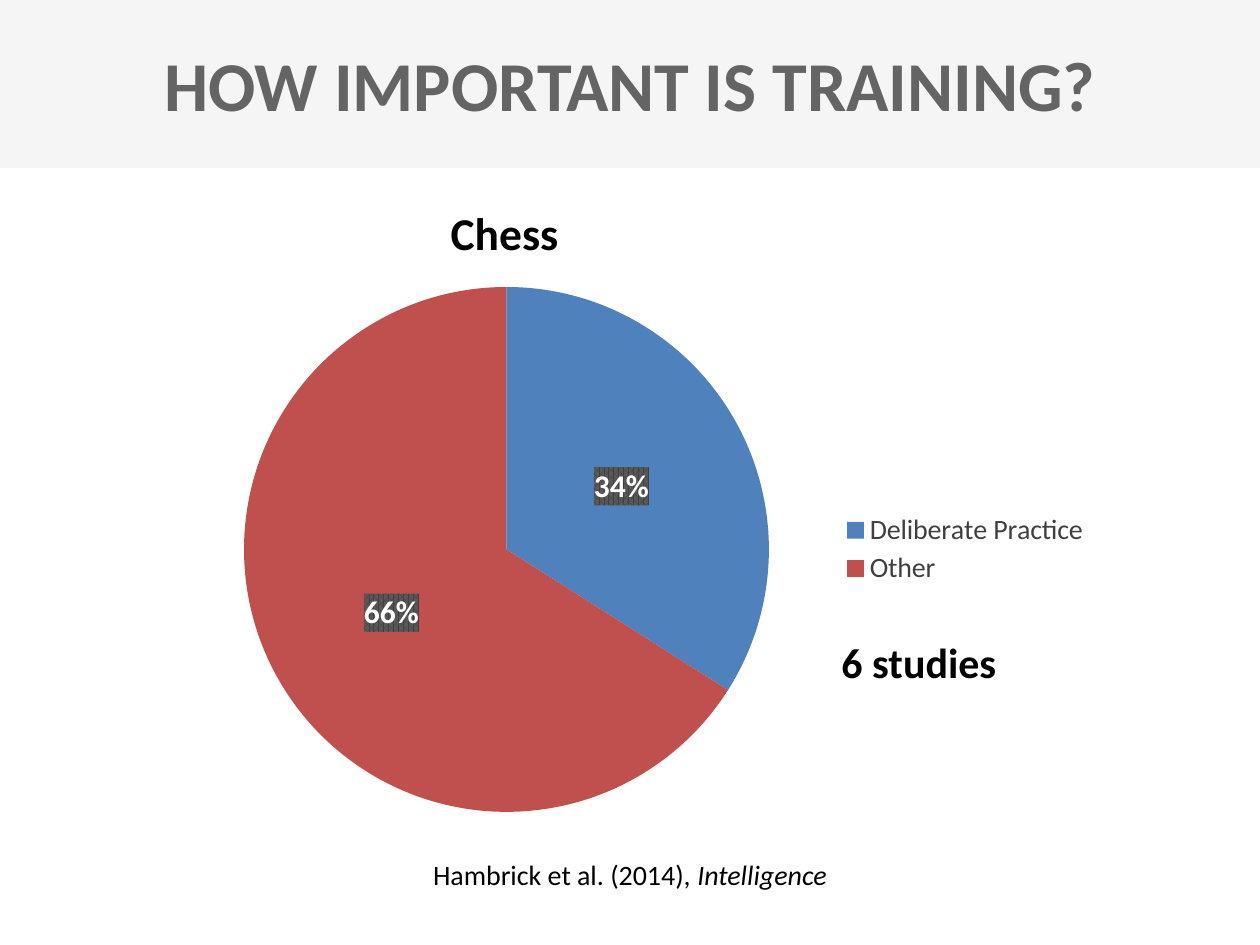
from dataclasses import dataclass

from lxml.etree import SubElement
from pptx import Presentation
from pptx.chart.data import CategoryChartData
from pptx.dml.color import RGBColor
from pptx.enum.chart import XL_CHART_TYPE, XL_LABEL_POSITION, XL_LEGEND_POSITION
from pptx.enum.shapes import MSO_SHAPE
from pptx.enum.text import MSO_ANCHOR, MSO_AUTO_SIZE, PP_ALIGN
from pptx.oxml import parse_xml
from pptx.oxml.ns import nsdecls, qn
from pptx.util import Pt

FONT_NAME = "Calibri"


@dataclass(frozen=True)
class Box:
    left: float
    top: float
    width: float
    height: float

    def lengths(self) -> tuple:
        return Pt(self.left), Pt(self.top), Pt(self.width), Pt(self.height)


@dataclass(frozen=True)
class TextRun:
    text: str
    italic: bool = False


@dataclass(frozen=True)
class Caption:
    box: Box
    runs: tuple[TextRun, ...]
    size: float
    bold: bool = True
    alignment: PP_ALIGN = PP_ALIGN.CENTER


@dataclass(frozen=True)
class Slice:
    category: str
    value: int
    color: str


CAPTIONS = (
    Caption(
        Box(0, 486.72, 720, 26.64),
        (TextRun("Hambrick et al. (2014), "), TextRun("Intelligence", True)),
        16,
        False,
    ),
    Caption(Box(135.36, 113.76, 306, 38.88), (TextRun("Chess"),), 26),
    Caption(Box(473.76, 360, 176.4, 36), (TextRun("6 studies"),), 24, True, PP_ALIGN.LEFT),
)
SLICES = (Slice("Deliberate Practice", 34, "4F81BD"), Slice("Other", 66, "C0504D"))
CHART_BOX = Box(100.8, 154.08, 527.76, 319.68)
PIE_BOX = Box(139.43, 164, 300, 300)
LEGEND_BOX = Box(479, 291, 145, 46)


def color(value: str) -> RGBColor:
    return RGBColor.from_string(value)


def style_font(font, size: float, value: str, bold: bool = False) -> None:
    font.name = FONT_NAME
    font.size = Pt(size)
    font.bold = bold
    font.color.rgb = color(value)


def add_band(slide, box: Box) -> None:
    shape = slide.shapes.add_shape(MSO_SHAPE.RECTANGLE, *box.lengths())
    shape.shadow.inherit = False
    shape.fill.solid()
    shape.fill.fore_color.rgb = color("F5F5F5")
    shape.line.fill.background()
    slide.shapes._spTree.insert(2, shape._element)


def fill_title(slide, box: Box, text: str) -> None:
    title = slide.shapes.title
    title.left, title.top, title.width, title.height = box.lengths()
    frame = title.text_frame
    frame.auto_size = MSO_AUTO_SIZE.NONE
    frame.vertical_anchor = MSO_ANCHOR.MIDDLE
    paragraph = frame.paragraphs[0]
    paragraph.alignment = PP_ALIGN.CENTER
    run = paragraph.add_run()
    run.text = text
    style_font(run.font, 40, "646464", True)


def add_caption(slide, caption: Caption) -> None:
    frame = slide.shapes.add_textbox(*caption.box.lengths()).text_frame
    frame.word_wrap = True
    frame.auto_size = MSO_AUTO_SIZE.SHAPE_TO_FIT_TEXT
    paragraph = frame.paragraphs[0]
    paragraph.alignment = caption.alignment
    for text_run in caption.runs:
        run = paragraph.add_run()
        run.text = text_run.text
        style_font(run.font, caption.size, "000000", caption.bold)
        run.font.italic = text_run.italic


def make_layout(box: Box, inner: bool = False):
    layout = parse_xml(f"<c:layout {nsdecls('c')}/>")
    manual = SubElement(layout, qn("c:manualLayout"))
    settings = {"layoutTarget": "inner"} if inner else {}
    settings |= {
        "xMode": "edge",
        "yMode": "edge",
        "x": round((box.left - CHART_BOX.left) / CHART_BOX.width, 4),
        "y": round((box.top - CHART_BOX.top) / CHART_BOX.height, 4),
        "w": round(box.width / CHART_BOX.width, 4),
        "h": round(box.height / CHART_BOX.height, 4),
    }
    for name, value in settings.items():
        SubElement(manual, qn(f"c:{name}")).set("val", str(value))
    return layout


def place_part(part, layout, position: int) -> None:
    for existing in part.findall(qn("c:layout")):
        part.remove(existing)
    part.insert(position, layout)


def format_labels(plot) -> None:
    plot.has_data_labels = True
    labels = plot.data_labels
    labels.show_percentage = True
    labels.show_value = False
    labels.number_format = "0%"
    labels.number_format_is_linked = False
    labels.position = XL_LABEL_POSITION.CENTER
    style_font(labels.font, 18, "FFFFFF", True)
    background = parse_xml(
        f'<c:spPr {nsdecls("c", "a")}><a:pattFill prst="pct75">'
        '<a:fgClr><a:srgbClr val="404040"/></a:fgClr>'
        '<a:bgClr><a:srgbClr val="595959"/></a:bgClr>'
        "</a:pattFill><a:ln><a:noFill/></a:ln></c:spPr>"
    )
    labels._element.find(qn("c:txPr")).addprevious(background)


def add_pie(slide) -> None:
    data = CategoryChartData()
    data.categories = [piece.category for piece in SLICES]
    data.add_series("Series 1", [piece.value for piece in SLICES])
    chart = slide.shapes.add_chart(XL_CHART_TYPE.PIE, *CHART_BOX.lengths(), data).chart
    chart.has_title = False
    style_font(chart.font, 10, "000000")
    plot = chart.plots[0]
    plot.vary_by_categories = True
    for index, piece in enumerate(SLICES):
        point_format = plot.series[0].points[index].format
        point_format.fill.solid()
        point_format.fill.fore_color.rgb = color(piece.color)
        point_format.line.fill.background()
    format_labels(plot)
    chart.has_legend = True
    chart.legend.position = XL_LEGEND_POSITION.RIGHT
    chart.legend.include_in_layout = False
    style_font(chart.legend.font, 16, "404040")
    plot_area = chart._chartSpace.chart.plotArea
    place_part(plot_area, make_layout(PIE_BOX, True), 0)
    place_part(chart.legend._element, make_layout(LEGEND_BOX), 1)


def main() -> None:
    presentation = Presentation()
    presentation.slide_width, presentation.slide_height = Pt(720), Pt(540)
    slide = presentation.slides.add_slide(presentation.slide_layouts[5])
    add_band(slide, Box(0, 0, 720, 96))
    fill_title(slide, Box(0, 31.68, 720, 32.4), "HOW IMPORTANT IS TRAINING?")
    add_pie(slide)
    for caption in CAPTIONS:
        add_caption(slide, caption)
    presentation.save("out.pptx")


if __name__ == "__main__":
    main()
